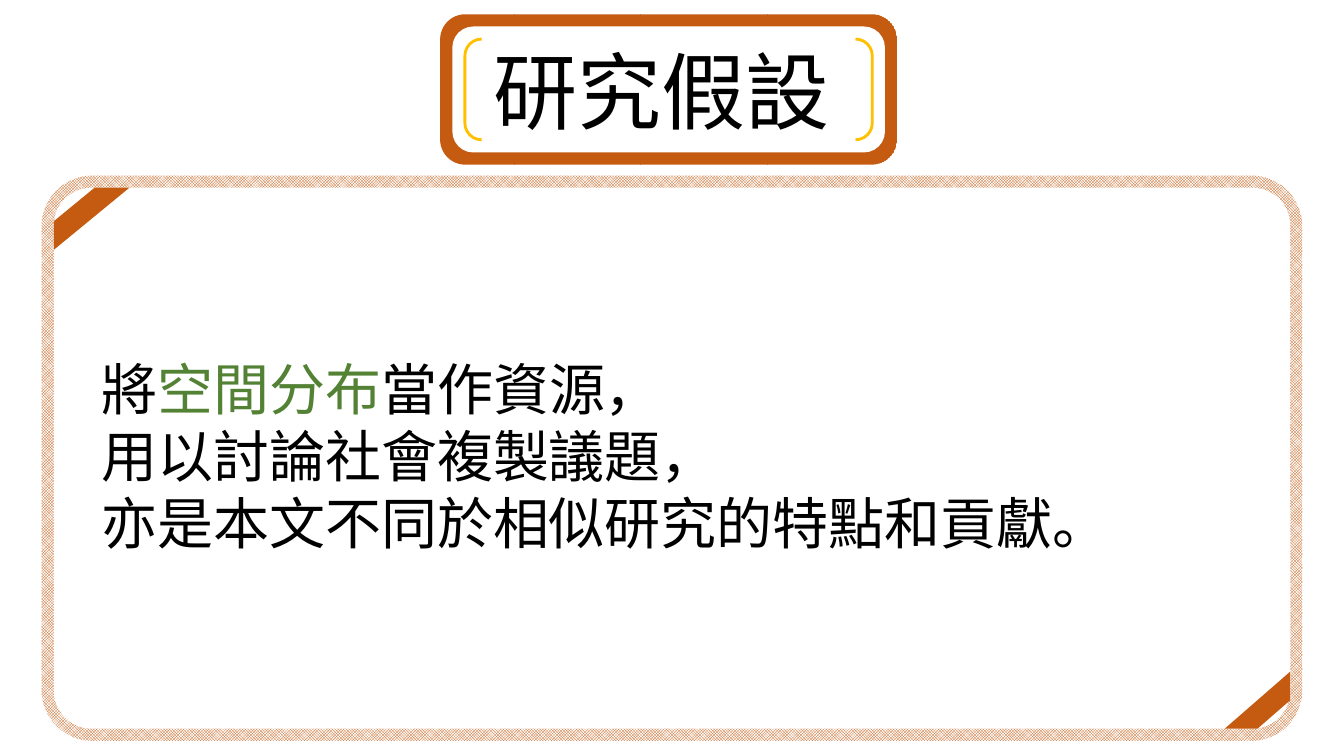
from pptx import Presentation
from pptx.dml.color import RGBColor
from pptx.enum.dml import MSO_PATTERN
from pptx.enum.shapes import MSO_SHAPE
from pptx.util import Inches, Pt
from lxml.etree import SubElement
from pptx.oxml.ns import qn

COLORS = {"orange": "C55A11", "gold": "FFC000", "green": "548235",
          "black": "000000", "white": "FFFFFF"}
PALETTE = {name: RGBColor.from_string(value) for name, value in COLORS.items()}
FONT = "Noto Sans CJK SC"

presentation = Presentation()
presentation.slide_width = Inches(13.333)
presentation.slide_height = Inches(7.5)
CELL = presentation.slide_width / 160
slide = presentation.slides.add_slide(presentation.slide_layouts[6])


def add_panel(group, kind, box, color=None, pattern=None, adjustment=None):
    shape = group.shapes.add_shape(kind, *[round(length * CELL) for length in box])
    shape.shadow.inherit = False
    shape.line.fill.background()
    if adjustment is not None:
        shape.adjustments[0] = adjustment
    if pattern is not None:
        shape.fill.patterned()
        shape.fill.pattern = pattern
        shape.fill.fore_color.rgb = PALETTE[color]
        shape.fill.back_color.rgb = PALETTE["white"]
    elif color:
        shape.fill.solid()
        shape.fill.fore_color.rgb = PALETTE[color]
    else:
        shape.fill.background()
    return shape


def inset(box, margin):
    left, top, width, height = box
    return left + margin, top + margin, width - 2 * margin, height - 2 * margin


frame = (4.95, 20.9, 150.1, 67.3)
page = inset(frame, 1.45)
page_left, page_top, page_width, page_height = page
frame_group = slide.shapes.add_group_shape()
add_panel(frame_group, MSO_SHAPE.ROUNDED_RECTANGLE, frame, "orange",
          MSO_PATTERN.SMALL_CHECKER_BOARD, 0.09)
add_panel(frame_group, MSO_SHAPE.ROUNDED_RECTANGLE, page, "white", adjustment=0.07)
stripe_width, stripe_height = 7.8, 6.8
lower_stripe = add_panel(
    frame_group, MSO_SHAPE.DIAGONAL_STRIPE,
    (page_left + page_width - stripe_width, page_top + page_height - stripe_height,
     stripe_width, stripe_height), "orange")
lower_stripe.rotation = 180
add_panel(frame_group, MSO_SHAPE.DIAGONAL_STRIPE, (page_left, page_top, 9, 7.4),
          "orange", adjustment=0.54)

plaque = (52.4, 1.7, 54.4, 17.9)
plaque_group = slide.shapes.add_group_shape()
add_panel(plaque_group, MSO_SHAPE.ROUNDED_RECTANGLE, plaque, "orange",
          MSO_PATTERN.DARK_VERTICAL)
add_panel(plaque_group, MSO_SHAPE.ROUNDED_RECTANGLE, inset(plaque, 1.45), "white")
bracket = add_panel(plaque_group, MSO_SHAPE.DOUBLE_BRACKET, inset(plaque, 2.95))
bracket.line.color.rgb = PALETTE["gold"]
bracket.line.width = Pt(2)

texts = [
    ((57.6, 3.25, 43.9, 13.3), 60, [[("研究假設", "black")]]),
    ((10.9, 41, 142.7, 25.4), 40, [
        [("將", "black"), ("空間分布", "green"), ("當作資源，", "black")],
        [("用以討論社會複製議題，", "black")],
        [("亦是本文不同於相似研究的特點和貢獻。", "black")],
    ]),
]
for box, size, lines in texts:
    text_box = slide.shapes.add_textbox(*[round(length * CELL) for length in box])
    text_frame = text_box.text_frame
    text_frame.word_wrap = True
    text_frame.margin_top = Inches(0.05) + Pt(size * 0.09)
    for index, line in enumerate(lines):
        paragraph = text_frame.add_paragraph() if index else text_frame.paragraphs[0]
        paragraph.line_spacing = Pt(size * 1.2)
        for words, color in line:
            run = paragraph.add_run()
            run.text = words
            run.font.size = Pt(size)
            run.font.name = FONT
            run.font.color.rgb = PALETTE[color]
            SubElement(run.font._element, qn("a:ea")).set("typeface", FONT)

presentation.save("out.pptx")
